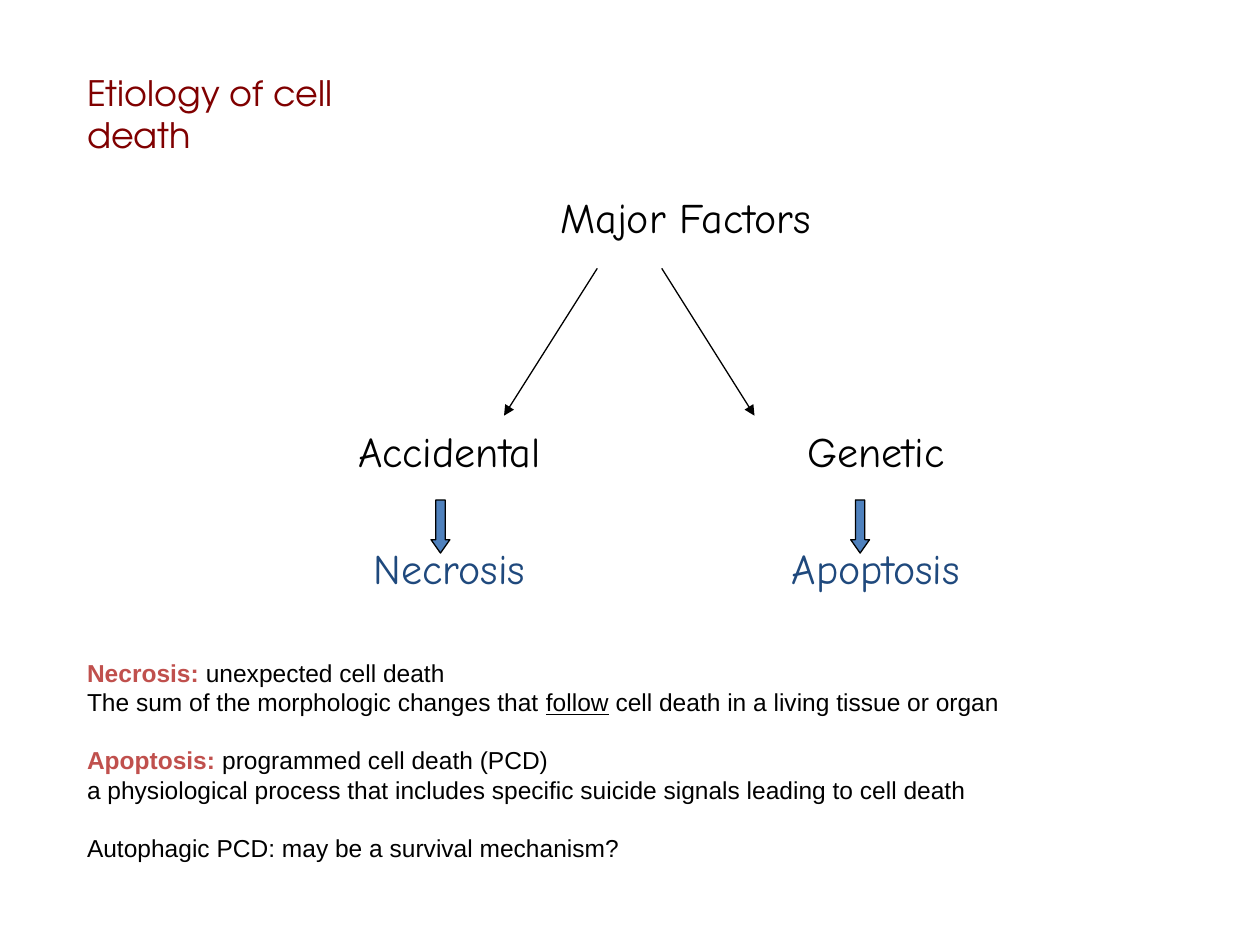
from lxml import etree
from pptx import Presentation
from pptx.dml.color import RGBColor
from pptx.enum.shapes import MSO_CONNECTOR, MSO_SHAPE
from pptx.enum.text import MSO_ANCHOR, MSO_AUTO_SIZE, PP_ALIGN
from pptx.oxml.ns import qn
from pptx.util import Cm, Pt

STRAIGHT = MSO_CONNECTOR.STRAIGHT
DOWN_ARROW = MSO_SHAPE.DOWN_ARROW
TOP = MSO_ANCHOR.TOP
NO_FIT = MSO_AUTO_SIZE.NONE
LEFT = PP_ALIGN.LEFT
CENTER = PP_ALIGN.CENTER

BLACK = RGBColor(0x00, 0x00, 0x00)
MAROON = RGBColor(0x80, 0x00, 0x00)
NAVY = RGBColor(0x1F, 0x49, 0x7D)
BLUE = RGBColor(0x4F, 0x81, 0xBD)
RED = RGBColor(0xC0, 0x50, 0x4D)

TITLE = {"name": "TeX Gyre Adventor", "size": Pt(20), "color": MAROON}
FACTOR = {"name": "Comic Neue", "size": Pt(24), "color": BLACK}
OUTCOME = {**FACTOR, "color": NAVY}
PLAIN = {"name": "Arial", "size": Pt(14), "color": BLACK}
TERM = {**PLAIN, "color": RED, "bold": True}
UNDERLINED = {**PLAIN, "underline": True}


class SlideBuilder:
    """Holds the line and label style and the current slide."""

    line_width = Pt(0.75)
    label_size = (7, 1.4)
    label_before = 4.8

    def __init__(self, s):
        self.s = s

    def place(self, sp, left, top, width, height):
        sp.left, sp.top = Cm(left), Cm(top)
        sp.width, sp.height = Cm(width), Cm(height)
        frame = {"word_wrap": True, "auto_size": NO_FIT, "vertical_anchor": TOP}
        for key, value in frame.items():
            setattr(sp.text_frame, key, value)

    def paragraph(self, p, runs, before=0, align=LEFT):
        p.alignment = align
        p.space_before = Pt(before)
        pPr = p._p.get_or_add_pPr()
        pPr.set("marL", "0")
        pPr.set("indent", "0")
        etree.SubElement(pPr, qn("a:buNone"))
        for text, style in runs:
            r = p.add_run()
            r.text = text
            for key, value in style.items():
                if key == "color":
                    r.font.color.rgb = value
                else:
                    setattr(r.font, key, value)

    def text(self, sp, box, paragraphs):
        self.place(sp, *box)
        tf = sp.text_frame
        for i, args in enumerate(paragraphs):
            self.paragraph(tf.add_paragraph() if i else tf.paragraphs[0], *args)

    def label(self, text, center, top, style):
        width, height = self.label_size
        box = (center - width / 2, top, width, height)
        sp = self.s.shapes.add_textbox(*map(Cm, box))
        self.text(sp, box, [([(text, style)], self.label_before, CENTER)])

    def arrow(self, x1, y1, x2, y2):
        c = self.s.shapes.add_connector(STRAIGHT, Cm(x1), Cm(y1), Cm(x2), Cm(y2))
        c.line.color.rgb = BLACK
        c.line.width = self.line_width
        etree.SubElement(c.line._get_or_add_ln(), qn("a:tailEnd"), type="triangle")
        etree.SubElement(c._element.spPr, qn("a:effectLst"))

    def down_arrow(self, left, top, width, height):
        sp = self.s.shapes.add_shape(DOWN_ARROW, Cm(left), Cm(top), Cm(width), Cm(height))
        sp.adjustments[0], sp.adjustments[1] = 0.5, 0.71
        sp.shadow.inherit = False
        sp.fill.solid()
        sp.fill.fore_color.rgb = BLUE
        sp.line.color.rgb = BLACK
        sp.line.width = self.line_width


def main():
    prs = Presentation()
    prs.slide_width, prs.slide_height = Cm(25.4), Cm(19.05)
    s = prs.slides.add_slide(prs.slide_layouts[1])
    b = SlideBuilder(s)

    # Title
    b.text(s.shapes.title, (1.5, 1.32, 7.09, 1.96), [([("Etiology of cell death", TITLE)],)])

    # Heading of the diagram
    b.label("Major Factors", 13.82, 3.73, FACTOR)

    # One branch per factor: arrow, factor, block arrow, outcome
    branches = (
        ("Accidental", "Necrosis", 9.06, 12.04, 10.16, 8.69),
        ("Genetic", "Apoptosis", 17.66, 13.34, 15.21, 17.15),
    )
    for factor, outcome, center, start, end, block_left in branches:
        b.arrow(start, 5.41, end, 8.38)
        b.label(factor, center, 8.46, FACTOR)
        b.down_arrow(block_left, 10.08, 0.38, 1.07)
        b.label(outcome, center, 10.82, OUTCOME)

    # Definitions
    gap = 16.5
    b.text(s.placeholders[1], (1.5, 13.13, 23.06, 4.45), [
        ([("Necrosis: ", TERM), ("unexpected cell death", PLAIN)],),
        ([("The sum of the morphologic changes that ", PLAIN), ("follow", UNDERLINED),
          (" cell death in a living tissue or organ", PLAIN)],),
        ([("Apoptosis: ", TERM), ("programmed cell death (PCD)", PLAIN)], gap),
        ([("a physiological process that includes specific suicide signals "
           "leading to cell death", PLAIN)],),
        ([("Autophagic PCD: may be a survival mechanism?", PLAIN)], gap),
    ])

    prs.save("out.pptx")


if __name__ == "__main__":
    main()
